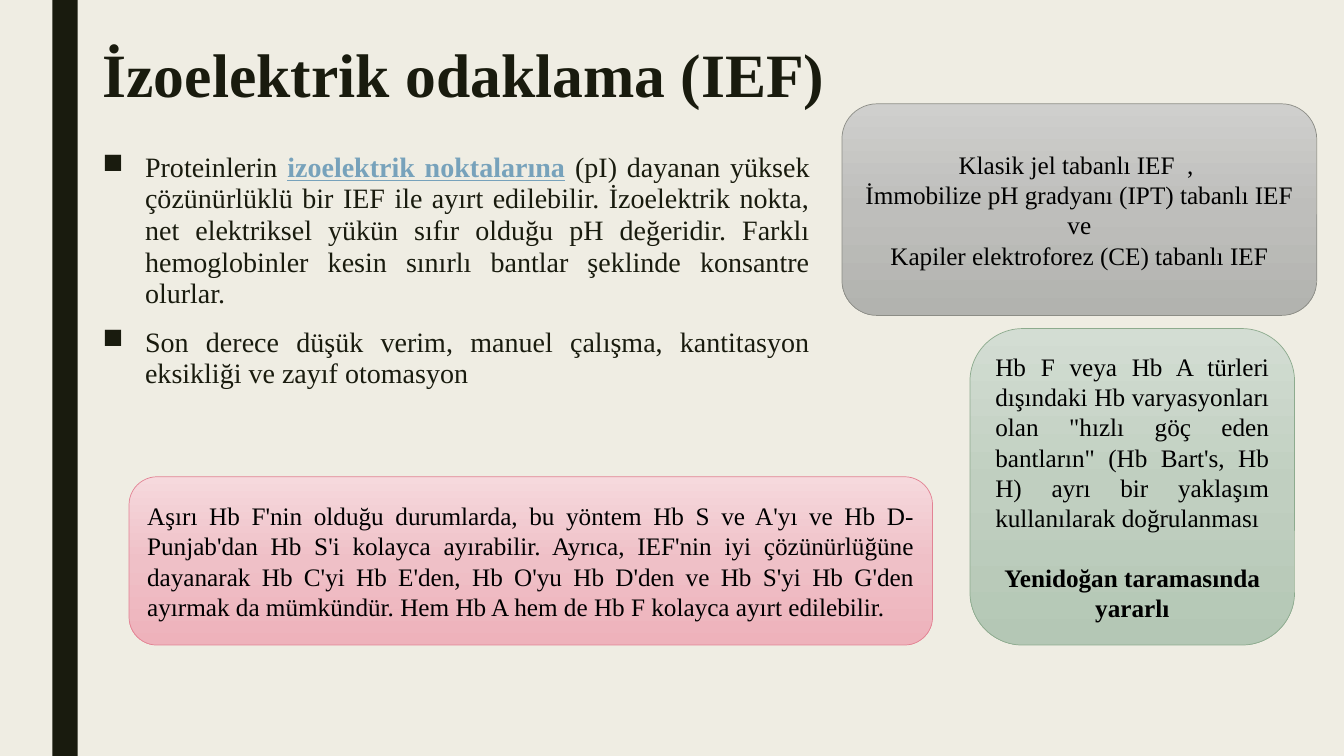
import copy

import pptx
import pptx.dml.color
import pptx.enum.shapes
import pptx.enum.text
import pptx.oxml
import pptx.oxml.ns
import pptx.util

Inches = pptx.util.Inches
Pt = pptx.util.Pt
ALIGN = pptx.enum.text.PP_ALIGN
ANCHOR = pptx.enum.text.MSO_ANCHOR
SHAPES = pptx.enum.shapes.MSO_SHAPE

FONT = "Times New Roman"
COLORS = {
    "background": "EFEDE3",
    "ink": "191B0E",
    "link": "77A2BB",
    "black": "000000",
}
GRAY = {"stops": ("CFCFCD", "BEBEBB", "B2B3AF"), "line": "8C8D86"}
PINK = {"stops": ("F6D9DD", "EFC0C7", "EEB2BB"), "line": "E28394"}
GREEN = {"stops": ("D3DDD3", "C0CFC0", "B4C7B5"), "line": "8DAB8E"}


def rgb(value):
    """Turn a hex string into a colour."""
    return pptx.dml.color.RGBColor.from_string(value)


def add_run(paragraph, text, size=18, color="black", bold=False, underline=False):
    """Append one formatted run to a paragraph."""
    run = paragraph.add_run()
    run.text = text
    run.font.name = FONT
    run.font.size = Pt(size)
    run.font.bold = bold
    run.font.underline = underline
    run.font.color.rgb = rgb(COLORS[color])


def next_paragraph(frame):
    """Return the empty first paragraph of a frame, or a new one."""
    first = frame.paragraphs[0]
    return frame.add_paragraph() if first.runs else first


def add_text_box(slide, box):
    """Add a wrapping, top-anchored text box and return its frame."""
    frame = slide.shapes.add_textbox(*map(Inches, box)).text_frame
    frame.word_wrap = True
    frame.vertical_anchor = ANCHOR.TOP
    return frame


def add_side_bar(slide, box):
    """Draw the dark vertical bar."""
    shape = slide.shapes.add_shape(SHAPES.RECTANGLE, *map(Inches, box))
    shape.shadow.inherit = False
    shape.fill.solid()
    shape.fill.fore_color.rgb = rgb(COLORS["ink"])
    shape.line.fill.background()


def add_title(slide, box, text):
    """Place the slide title."""
    paragraph = add_text_box(slide, box).paragraphs[0]
    paragraph.line_spacing = 0.89
    add_run(paragraph, text, size=44, color="ink", bold=True)


def add_bullets(slide, box, bullets):
    """Place justified bullets, each a list of (text, format) runs."""
    frame = add_text_box(slide, box)
    for runs in bullets:
        paragraph = next_paragraph(frame)
        paragraph.alignment = ALIGN.JUSTIFY
        paragraph.line_spacing = 0.94
        paragraph.space_before = Pt(10)
        paragraph.space_after = Pt(2)
        properties = paragraph._p.get_or_add_pPr()
        properties.set("marL", str(Inches(0.42)))
        properties.set("indent", str(-Inches(0.42)))
        bullet = pptx.oxml.ns.qn("a:buChar")
        properties.append(properties.makeelement(bullet, {"char": "■"}))
        for text, style in runs:
            add_run(paragraph, text, size=20, **style)


def fill_gradient(shape, colors):
    """Fill a shape with a three-stop gradient from top to bottom."""
    shape.fill.gradient()
    shape.fill.gradient_angle = 270
    stops = shape._element.spPr.find(".//" + pptx.oxml.ns.qn("a:gsLst"))
    stops.insert(1, copy.deepcopy(stops[0]))
    for index, (stop, color) in enumerate(zip(shape.fill.gradient_stops, colors)):
        stop.position = index / 2
        stop.color.rgb = rgb(color)


def add_card(slide, box, palette, paragraphs):
    """Draw a rounded card with (text, alignment, space before, bold) paragraphs."""
    shape = slide.shapes.add_shape(SHAPES.ROUNDED_RECTANGLE, *map(Inches, box))
    shape.shadow.inherit = False
    fill_gradient(shape, palette["stops"])
    shape.line.color.rgb = rgb(palette["line"])
    shape.line.width = Pt(0.5)
    frame = shape.text_frame
    frame.word_wrap = True
    frame.vertical_anchor = ANCHOR.MIDDLE
    for text, alignment, gap, bold in paragraphs:
        paragraph = next_paragraph(frame)
        paragraph.alignment = alignment
        paragraph.space_before = Pt(gap)
        add_run(paragraph, text, bold=bold)


def build_slide(presentation):
    """Compose the isoelectric focusing slide."""
    slide = presentation.slides.add_slide(presentation.slide_layouts[6])
    slide.background.fill.solid()
    slide.background.fill.fore_color.rgb = rgb(COLORS["background"])
    add_side_bar(slide, (0.52, 0, 0.25, 7.5))
    add_title(slide, (0.92, 0.4, 7.43, 1.45), "İzoelektrik odaklama (IEF)")
    ink = {"color": "ink"}
    add_bullets(slide, (0.92, 1.46, 7.21, 5.29), [
        [
            ("Proteinlerin ", ink),
            ("izoelektrik noktalarına", {"color": "link", "bold": True, "underline": True}),
            (" (pI) dayanan yüksek çözünürlüklü bir IEF ile ayırt edilebilir. "
             "İzoelektrik nokta, net elektriksel yükün sıfır olduğu pH değeridir. "
             "Farklı hemoglobinler kesin sınırlı bantlar şeklinde konsantre olurlar.", ink),
        ],
        [("Son derece düşük verim, manuel çalışma, kantitasyon eksikliği ve "
          "zayıf otomasyon", ink)],
    ])
    methods = (
        "Klasik jel tabanlı IEF  , ",
        "İmmobilize pH gradyanı (IPT) tabanlı IEF ve",
        "Kapiler elektroforez (CE) tabanlı IEF",
    )
    add_card(slide, (8.35, 1.03, 4.71, 2.1), GRAY,
             [(method, ALIGN.CENTER, 0, False) for method in methods])
    add_card(slide, (1.28, 4.73, 7.97, 1.67), PINK, [
        ("Aşırı Hb F'nin olduğu durumlarda, bu yöntem Hb S ve A'yı ve Hb D-Punjab'dan "
         "Hb S'i kolayca ayırabilir. Ayrıca, IEF'nin iyi çözünürlüğüne dayanarak Hb C'yi "
         "Hb E'den, Hb O'yu Hb D'den ve Hb S'yi Hb G'den ayırmak da mümkündür. "
         "Hem Hb A hem de Hb F kolayca ayırt edilebilir.", ALIGN.JUSTIFY, 0, False),
    ])
    add_card(slide, (9.62, 3.26, 3.22, 3.14), GREEN, [
        ("Hb F veya Hb A türleri dışındaki Hb varyasyonları olan \"hızlı göç eden "
         "bantların\" (Hb Bart's, Hb H) ayrı bir yaklaşım kullanılarak doğrulanması",
         ALIGN.JUSTIFY, 0, False),
        ("Yenidoğan taramasında yararlı", ALIGN.CENTER, 21, True),
    ])


def main():
    """Create and save the presentation."""
    presentation = pptx.Presentation()
    presentation.slide_width = Inches(13.33)
    presentation.slide_height = Inches(7.5)
    build_slide(presentation)
    presentation.save("out.pptx")


if __name__ == "__main__":
    main()
